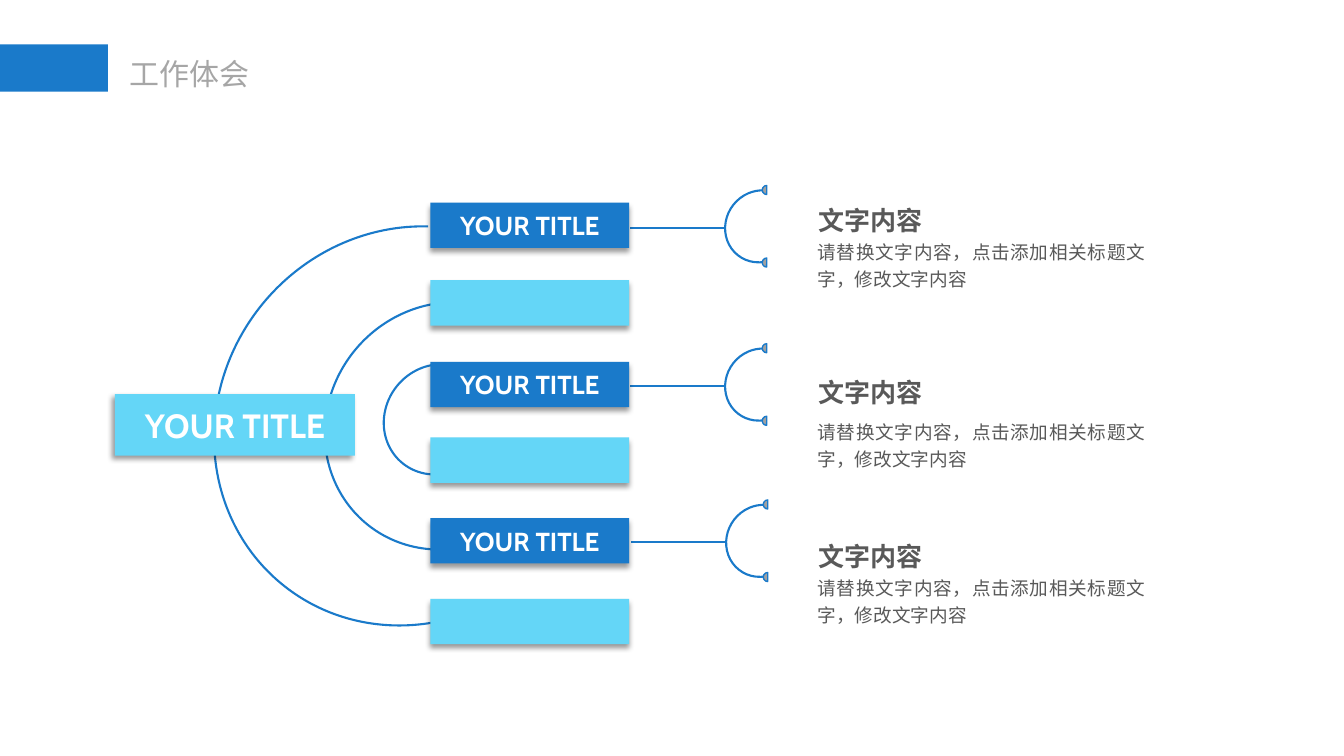
from lxml.etree import SubElement
from pptx import Presentation
from pptx.dml.color import RGBColor
from pptx.enum.shapes import MSO_CONNECTOR, MSO_SHAPE as SHAPE
from pptx.enum.text import MSO_ANCHOR as ANCHOR, MSO_AUTO_SIZE as AUTO, PP_ALIGN as ALIGN
from pptx.oxml import parse_xml
from pptx.oxml.ns import nsdecls, qn
from pptx.util import Inches, Pt

COLORS = {"blue": "1A7ACA", "sky": "64D6F7", "white": "FFFFFF", "dot": "A1A1A1",
          "title": "A6A6A6", "text": "595959"}
CJK = "Noto Sans CJK SC"
HEADING = "文字内容"
BODY = "请替换文字内容，点击添加相关标题文字，修改文字内容"
LABEL = "YOUR TITLE"


def rgb(name):
    return RGBColor.from_string(COLORS[name])


class Deck:
    def __init__(self, width, height):
        self.prs = Presentation()
        self.prs.slide_width, self.prs.slide_height = Inches(width), Inches(height)
        self.slide = self.prs.slides.add_slide(self.prs.slide_layouts[5])

    def set_text(self, sp, text, size, color, font, bold=False, align=ALIGN.LEFT,
                 spacing=1.0, inset=(0.1, 0.05), **frame):
        """Fill sp with one styled paragraph; frame holds text frame attributes."""
        tf = sp.text_frame
        side, edge = map(Inches, inset)
        frame.update(margin_left=side, margin_right=side, margin_top=edge, margin_bottom=edge)
        p = tf.paragraphs[0]
        r = p.add_run()
        r.text = text
        formats = (
            (tf, frame),
            (p, {"alignment": align, "line_spacing": spacing}),
            (r.font, {"size": Pt(size), "bold": bold, "name": font}),
        )
        for target, values in formats:
            for key, value in values.items():
                setattr(target, key, value)
        r.font.color.rgb = rgb(color)
        SubElement(r.font._element, qn("a:ea"), typeface=CJK)

    def title(self, text, box):
        sp = self.slide.shapes.title
        sp.left, sp.top, sp.width, sp.height = map(Inches, box)
        self.set_text(sp, text, 21.4, "title", CJK, align=ALIGN.CENTER, word_wrap=False,
                      auto_size=AUTO.SHAPE_TO_FIT_TEXT, vertical_anchor=ANCHOR.TOP)

    def text(self, text, box, size, **style):
        sp = self.slide.shapes.add_textbox(*map(Inches, box))
        self.set_text(sp, text, size, "text", "Arial", spacing=1.2, word_wrap=True,
                      auto_size=AUTO.SHAPE_TO_FIT_TEXT, **style)

    def shape(self, kind, box, fill=None, line=None, adjust=(), rotation=0):
        sp = self.slide.shapes.add_shape(kind, *map(Inches, box))
        sp.shadow.inherit = False
        sp.rotation = rotation
        for i, value in enumerate(adjust):
            sp.adjustments[i] = value
        if fill:
            sp.fill.solid()
            sp.fill.fore_color.rgb = rgb(fill)
        else:
            sp.fill.background()
        if line:
            sp.line.color.rgb = rgb("blue")
            sp.line.width = Pt(line)
        else:
            sp.line.fill.background()
        return sp

    def bar(self, box, fill, text="", size=18.6, angle=90):
        """Draw a rectangle with a soft shadow cast towards angle."""
        sp = self.shape(SHAPE.RECTANGLE, box, fill)
        sp._element.spPr.find(qn("a:effectLst")).append(parse_xml(
            f'<a:outerShdw {nsdecls("a")} blurRad="{Pt(4)}" dist="{Pt(3)}" '
            f'dir="{angle * 60000}" algn="ctr" rotWithShape="0">'
            '<a:srgbClr val="000000"><a:alpha val="40000"/></a:srgbClr></a:outerShdw>'))
        if text:
            self.set_text(sp, text, size, "white", "Cabin", bold=True, align=ALIGN.CENTER,
                          vertical_anchor=ANCHOR.MIDDLE)

    def arc(self, box):
        """Draw the left half of an oval, open to the right."""
        self.shape(SHAPE.ARC, box, line=1.5, adjust=(134.302, 33.965), rotation=218.3)

    def line(self, x1, x2, y):
        sp = self.slide.shapes.add_connector(
            MSO_CONNECTOR.STRAIGHT, *map(Inches, (x1, y, x2, y)))
        sp.line.color.rgb = rgb("blue")
        sp.line.width = Pt(1.5)
        SubElement(sp._element.spPr, qn("a:effectLst"))

    def bracket(self, x, y):
        """Draw a lead line ending in a small arc with a half dot at each tip."""
        self.arc((x, y, 0.69, 0.73))
        for dot_y in (y - 0.04, y + 0.68):
            self.shape(SHAPE.PIE, (x + 0.36, dot_y, 0.09, 0.09), "dot", 1,
                       adjust=(55.109, 162))
        self.line(x - 0.95, x - 0.02, y + 0.38)


def main():
    deck = Deck(13.33, 7.5)
    deck.shape(SHAPE.RECTANGLE, (0, 0.44, 1.07, 0.47), "blue")
    deck.title("工作体会", (1.18, 0.5, 1.4, 0.46))

    for box in ((2.17, 2.2, 3.81, 4.05), (3.25, 2.97, 2.36, 2.51), (3.82, 3.6, 1.05, 1.12)):
        deck.arc(box)
    for x, y in ((7.2, 1.88), (7.2, 3.45), (7.21, 5)):
        deck.bracket(x, y)

    for i, y in enumerate((2.01, 2.78, 3.59, 4.34, 5.14, 5.94)):
        fill, label = ("sky", "") if i % 2 else ("blue", LABEL)
        deck.bar((4.27, y, 1.97, 0.45), fill, label)
    deck.bar((1.14, 3.91, 2.38, 0.61), "sky", LABEL, size=24, angle=135)

    for heading_y, body_y in ((1.92, 2.31), (3.62, 4.09), (5.25, 5.64)):
        deck.text(BODY, (8.02, body_y, 3.43, 0.63), 13.3, align=ALIGN.JUSTIFY,
                  inset=(0.09, 0.04))
        deck.text(HEADING, (8.02, heading_y, 2.52, 0.48), 18.6, bold=True)

    deck.prs.save("out.pptx")


if __name__ == "__main__":
    main()
